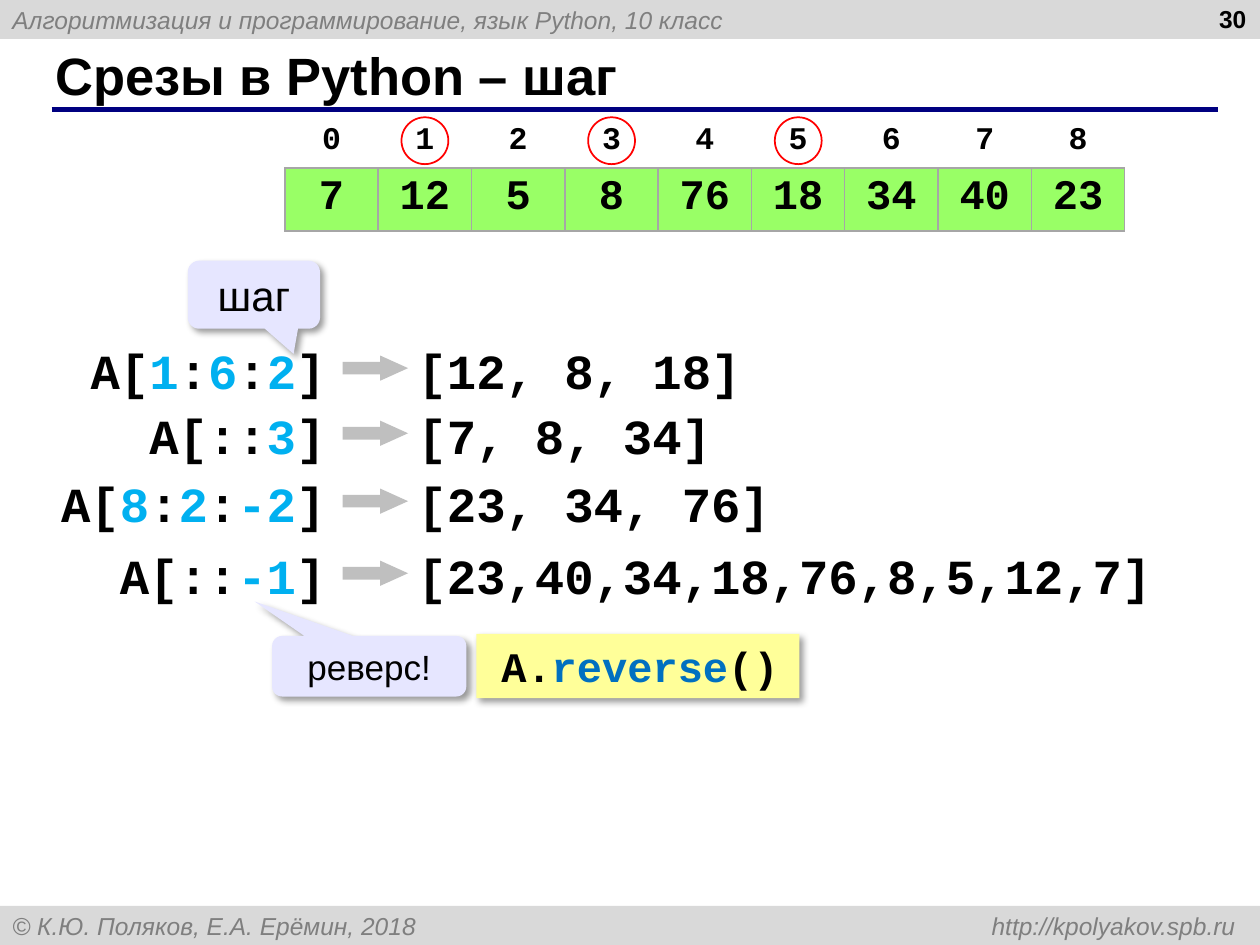
from dataclasses import dataclass

from lxml import etree
from pptx import Presentation
from pptx.dml.color import RGBColor
from pptx.enum.shapes import MSO_CONNECTOR, MSO_SHAPE
from pptx.enum.text import MSO_ANCHOR, PP_ALIGN
from pptx.oxml.ns import qn
from pptx.util import Pt

LEFT, CENTER, RIGHT = PP_ALIGN.LEFT, PP_ALIGN.CENTER, PP_ALIGN.RIGHT
JUSTIFY = PP_ALIGN.JUSTIFY
TOP, MIDDLE = MSO_ANCHOR.TOP, MSO_ANCHOR.MIDDLE
RECTANGLE, OVAL = MSO_SHAPE.RECTANGLE, MSO_SHAPE.OVAL
ARROW, CALLOUT = MSO_SHAPE.RIGHT_ARROW, MSO_SHAPE.ROUNDED_RECTANGULAR_CALLOUT
STRAIGHT = MSO_CONNECTOR.STRAIGHT


@dataclass(frozen=True)
class Theme:
    sans: str = "Arial"
    mono: str = "Courier New"
    ink: str = "000000"
    muted: str = "7F7F7F"
    bar: str = "D9D9D9"
    rule: str = "000080"
    cell: str = "99FF66"
    border: str = "A6A6A6"
    number: str = "00B0F0"
    method: str = "0070C0"
    arrow: str = "BFBFBF"
    callout: str = "E6E6FF"
    note: str = "FFFF99"
    ring: str = "FF0000"
    title_size: int = 30
    code_size: int = 28
    value_size: int = 24
    label_size: int = 20
    index_size: int = 18
    bar_size: int = 14


THEME = Theme()
SLIDE_WIDTH, SLIDE_HEIGHT = 720, 540
BAR_HEIGHT = 22.3
VALUES = [7, 12, 5, 8, 76, 18, 34, 40, 23]
PICKED = [1, 3, 5]
# Pieces of each slice alternate between plain code and highlighted numbers.
SLICES = [
    (191, ["A[", "1", ":", "6", ":", "2", "]"], "[12, 8, 18]"),
    (228.2, ["A[::", "3", "]"], "[7, 8, 34]"),
    (267, ["A[", "8", ":", "2", ":", "-2", "]"], "[23, 34, 76]"),
    (308.2, ["A[::", "-1", "]"], "[23,40,34,18,76,8,5,12,7]"),
]


def style(span, size, font=THEME.sans, color=THEME.ink, bold=False, italic=False):
    span.font.size, span.font.name = Pt(size), font
    span.font.bold, span.font.italic = bold, italic
    span.font.color.rgb = RGBColor.from_string(color)


def write(frame, pieces, size, align=LEFT, anchor=MIDDLE, accent=THEME.ink, **look):
    """Fill a frame with one paragraph whose odd pieces take the accent colour."""
    frame.vertical_anchor = anchor
    para = frame.paragraphs[0]
    para.alignment = align
    for index, piece in enumerate(pieces):
        span = para.add_run()
        span.text = piece
        style(span, size, **(look | {"color": accent} if index % 2 else look))
    return para


def add_text(page, box, pieces, size, **look):
    frame = page.shapes.add_textbox(*map(Pt, box)).text_frame
    frame.word_wrap = False
    write(frame, pieces, size, **look)
    return frame


def add_block(page, kind, box, fill=None, adjustments=()):
    shape = page.shapes.add_shape(kind, *map(Pt, box))
    shape.shadow.inherit = False
    shape.line.fill.background()
    if fill:
        shape.fill.solid()
        shape.fill.fore_color.rgb = RGBColor.from_string(fill)
    else:
        shape.fill.background()
    for index, value in enumerate(adjustments):
        shape.adjustments[index] = value
    return shape


def add_shadow(shape):
    effects = shape._element.spPr.find(qn("a:effectLst"))
    shadow = etree.SubElement(effects, qn("a:outerShdw"), blurRad=str(Pt(4)),
                              dist=str(Pt(3)), dir="2700000", algn="tl", rotWithShape="0")
    color = etree.SubElement(shadow, qn("a:srgbClr"), val=THEME.ink)
    etree.SubElement(color, qn("a:alpha"), val="40000")


def add_borders(cell, sides):
    properties = cell._tc.get_or_add_tcPr()
    for side in sides:
        line = etree.SubElement(properties, qn(f"a:ln{side}"), w=str(Pt(1)))
        fill = etree.SubElement(line, qn("a:solidFill"))
        etree.SubElement(fill, qn("a:srgbClr"), val=THEME.border)


def add_bar(page, box, text):
    bar = add_block(page, RECTANGLE, box, THEME.bar)
    para = write(bar.text_frame, [text], THEME.bar_size, color=THEME.muted, italic=True)
    tabs = etree.SubElement(para._p.get_or_add_pPr(), qn("a:tabLst"))
    etree.SubElement(tabs, qn("a:tab"), pos=str(Pt(699)), algn="r")


def add_heading(page, box, text):
    left, top, width, height = box
    title = page.shapes.title
    title.left, title.top, title.width, title.height = map(Pt, box)
    write(title.text_frame, [text], THEME.title_size, bold=True)
    y = top + height + 1.4
    rule = page.shapes.add_connector(STRAIGHT, Pt(left + 5), Pt(y),
                                     Pt(left + width + 12), Pt(y))
    rule.line.color.rgb = RGBColor.from_string(THEME.rule)
    rule.line.width = Pt(3)
    etree.SubElement(rule._element.spPr, qn("a:effectLst"))


def add_array(page, box):
    """Place the indexed array and ring the indices that the slice picks."""
    left, top, width, height = box
    table = page.shapes.add_table(2, len(VALUES), *map(Pt, box)).table
    table.first_row = table.horz_banding = False
    index_height = 29
    table.rows[0].height = Pt(index_height)
    table.rows[1].height = Pt(height - index_height)
    step = width / len(VALUES)
    for column, value in enumerate(VALUES):
        table.columns[column].width = Pt(step)
        index_cell, value_cell = table.cell(0, column), table.cell(1, column)
        add_borders(index_cell, "B")
        index_cell.fill.background()
        add_borders(value_cell, "LRTB")
        value_cell.fill.solid()
        value_cell.fill.fore_color.rgb = RGBColor.from_string(THEME.cell)
        for cell, text, size in ((index_cell, column, THEME.index_size),
                                 (value_cell, value, THEME.value_size)):
            write(cell.text_frame, [str(text)], size, align=CENTER, anchor=TOP,
                  font=THEME.mono, bold=True)
    ring_size = 26.8
    for column in PICKED:
        x = left + (column + 0.5) * step - ring_size / 2
        ring = add_block(page, OVAL, (x, top, ring_size, ring_size))
        ring.line.color.rgb = RGBColor.from_string(THEME.ring)
        ring.line.width = Pt(1)


def add_slice(page, top, pieces, result):
    """Place one row: the slice ends at the arrow, the result starts after it."""
    right, result_left, height = 201, 214.6, 41
    code = {"font": THEME.mono, "bold": True, "anchor": TOP}

    def width(text):
        return (len(text) + 1) * THEME.code_size * 0.6 + 22.3

    slice_width = width("".join(pieces))
    frame = add_text(page, (right - slice_width, top, slice_width, height), pieces,
                     THEME.code_size, align=RIGHT, accent=THEME.number, **code)
    frame.margin_right = Pt(15)
    add_block(page, ARROW, (195.8, top + 12.2, 37.4, 14.4), THEME.arrow, (0.5, 1.105))
    frame = add_text(page, (result_left, top, width(result), height), [result],
                     THEME.code_size, **code)
    frame.margin_left = Pt(24)


def add_callout(page, box, text, size, tip):
    callout = add_block(page, CALLOUT, box, THEME.callout, (*tip, 0.167))
    add_shadow(callout)
    write(callout.text_frame, [text], size, align=CENTER)


def add_method(page, box):
    note = add_block(page, RECTANGLE, box, THEME.note)
    add_shadow(note)
    para = write(note.text_frame, ["A.", "reverse", "()"], THEME.value_size, align=JUSTIFY,
                 accent=THEME.method, font=THEME.mono, bold=True)
    properties = para._p.get_or_add_pPr()
    properties.set("marL", str(Pt(14.4)))
    properties.set("indent", str(Pt(-7.2)))


def main():
    deck = Presentation()
    deck.slide_width, deck.slide_height = Pt(SLIDE_WIDTH), Pt(SLIDE_HEIGHT)
    page = deck.slides.add_slide(deck.slide_layouts[5])
    add_bar(page, (0, 0, SLIDE_WIDTH, BAR_HEIGHT),
            "Алгоритмизация и программирование, язык Python, 10 класс")
    add_bar(page, (0, SLIDE_HEIGHT - BAR_HEIGHT, SLIDE_WIDTH, BAR_HEIGHT),
            "© К.Ю. Поляков, Е.А. Ерёмин, 2018\thttp://kpolyakov.spb.ru")
    add_heading(page, (24.5, 23.8, 659.5, 37.4), "Срезы в Python – шаг")
    add_text(page, (551.5, -1.4, 167.8, 37.4), ["30"], THEME.bar_size,
             align=RIGHT, anchor=TOP, bold=True)
    add_array(page, (162.8, 67, 480, 64))
    for row in SLICES:
        add_slice(page, *row)
    add_callout(page, (155.5, 363.4, 111, 34.6), "реверс!", THEME.label_size, (-0.59, -1.07))
    add_method(page, (272.2, 362.2, 184.6, 36.7))
    add_callout(page, (107.3, 149, 75.6, 38.9), "шаг", THEME.value_size, (0.3, 0.87))
    deck.save("out.pptx")


if __name__ == "__main__":
    main()
